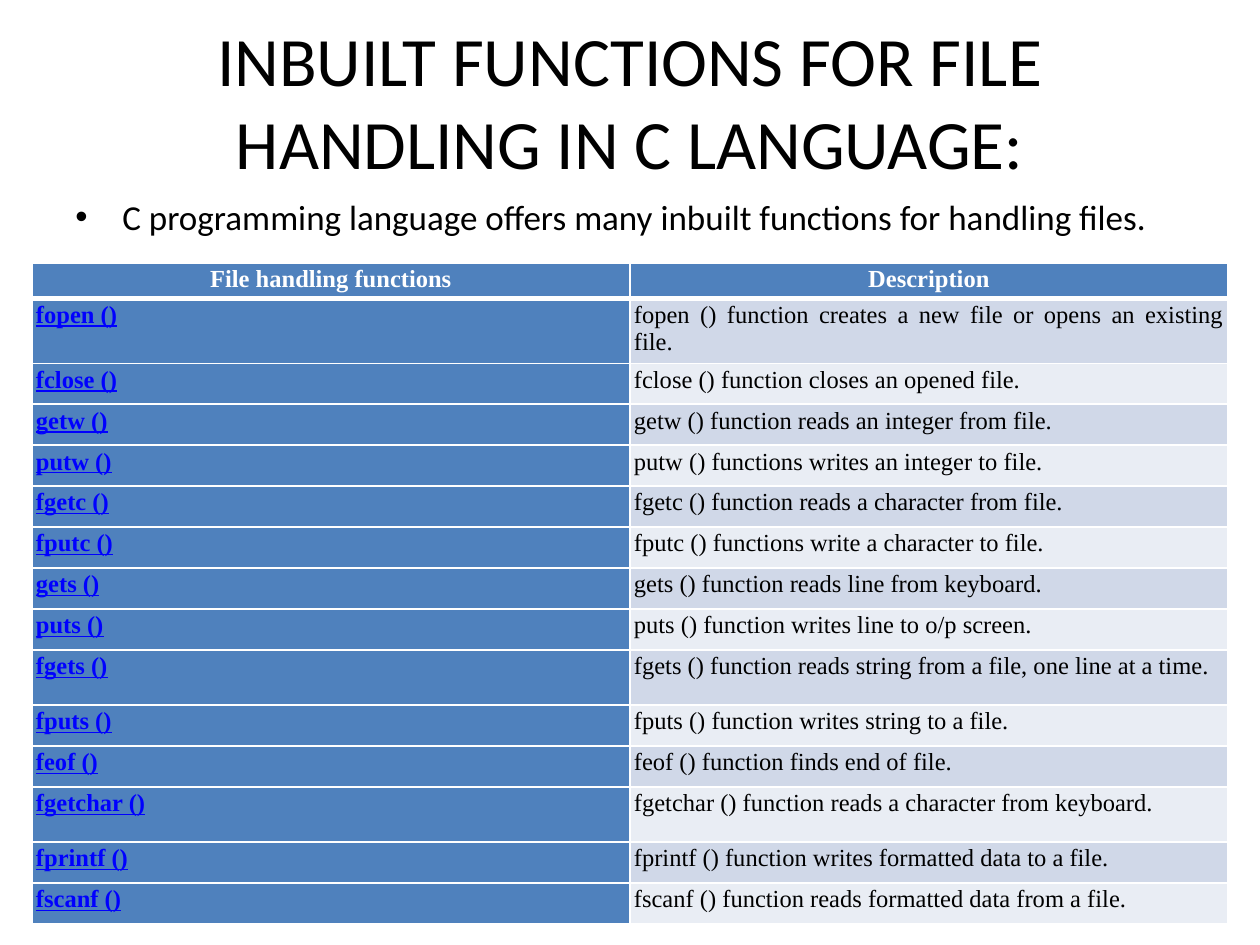
from lxml import etree
from pptx import Presentation
from pptx import util as u
from pptx.dml.color import RGBColor
from pptx.enum import text
from pptx.oxml import ns

EMU_PER_PX = 914400 / 126
BLACK = RGBColor(0x00, 0x00, 0x00)
WHITE = RGBColor(0xFF, 0xFF, 0xFF)
BLUE = RGBColor(0x4F, 0x81, 0xBD)
LINK_BLUE = RGBColor(0x00, 0x00, 0xFF)
BANDS = (RGBColor(0xD0, 0xD8, 0xE8), RGBColor(0xE9, 0xED, 0xF4))
SANS, SERIF = "Calibri", "Times New Roman"

TITLE = "INBUILT FUNCTIONS FOR FILE HANDLING IN C LANGUAGE:"
INTRO = "C programming language offers many inbuilt functions for handling files."
HEADERS = ("File handling functions", "Description")
FUNCTIONS = (
    ("fopen ()", "function creates a new file or opens an existing file."),
    ("fclose ()", "function closes an opened file."),
    ("getw ()", "function reads an integer from file."),
    ("putw ()", "functions writes an integer to file."),
    ("fgetc ()", "function reads a character from file."),
    ("fputc ()", "functions write a character to file."),
    ("gets ()", "function reads line from keyboard."),
    ("puts ()", "function writes line to o/p screen."),
    ("fgets ()", "function reads string from a file, one line at a time."),
    ("fputs ()", "function writes string to a file."),
    ("feof ()", "function finds end of file."),
    ("fgetchar ()", "function reads a character from keyboard."),
    ("fprintf ()", "function writes formatted data to a file."),
    ("fscanf ()", "function reads formatted data from a file."),
)
TALL_FUNCTIONS = ("fopen ()", "fgets ()", "fgetchar ()")
HEADER_HEIGHT, TALL_HEIGHT, ROW_HEIGHT = 35, 55, 41
TABLE_LEFT, TABLE_TOP, COLUMN_WIDTH = 32, 263, 598


def px(length):
    """Turn pixels into EMU."""
    return u.Emu(round(length * EMU_PER_PX))


def write(text_frame, words, size, font, color, align, bold=False, underline=False):
    """Put one formatted paragraph into a text frame and return it."""
    text_frame.text = words
    text_frame.word_wrap = True
    paragraph = text_frame.paragraphs[0]
    paragraph.alignment = align
    style = paragraph.runs[0].font
    style.size, style.name, style.color.rgb = u.Pt(size), font, color
    style.bold, style.underline = bold, underline
    return paragraph


def add_text(slide, box, words, size, align, anchor):
    """Add a text box and return its paragraph."""
    text_frame = slide.shapes.add_textbox(*map(px, box)).text_frame
    text_frame.vertical_anchor = anchor
    return write(text_frame, words, size, SANS, BLACK, align)


def add_bullet(paragraph, indent):
    """Give a paragraph a hanging bullet."""
    properties = paragraph._p.get_or_add_pPr()
    properties.set("marL", str(px(indent)))
    properties.set("indent", str(-px(indent)))
    etree.SubElement(properties, ns.qn("a:buFont"), typeface="Arial")
    etree.SubElement(properties, ns.qn("a:buChar"), char="•")


def set_borders(cell, top, bottom):
    """Draw white borders round a cell, with top and bottom widths in points."""
    properties = cell._tc.get_or_add_tcPr()
    widths = {"a:lnL": 1, "a:lnR": 1, "a:lnT": top, "a:lnB": bottom}
    for index, (tag, width) in enumerate(widths.items()):
        line = etree.Element(ns.qn(tag), w=str(u.Pt(width)))
        fill = etree.SubElement(line, ns.qn("a:solidFill"))
        etree.SubElement(fill, ns.qn("a:srgbClr"), val=str(WHITE))
        properties.insert(index, line)


def fill_cell(cell, words, fill, color, align, top=1, bottom=1, **emphasis):
    """Write and colour one table cell."""
    cell.margin_left = cell.margin_right = px(4)
    cell.margin_top = cell.margin_bottom = px(3)
    write(cell.text_frame, words, 14, SERIF, color, align, **emphasis)
    cell.fill.solid()
    cell.fill.fore_color.rgb = fill
    set_borders(cell, top, bottom)


def add_function_table(slide):
    """Add the table of functions and their descriptions."""
    heights = [HEADER_HEIGHT] + [
        TALL_HEIGHT if name in TALL_FUNCTIONS else ROW_HEIGHT for name, _ in FUNCTIONS
    ]
    box = (TABLE_LEFT, TABLE_TOP, 2 * COLUMN_WIDTH, sum(heights))
    table = slide.shapes.add_table(len(heights), 2, *map(px, box)).table
    for column in table.columns:
        column.width = px(COLUMN_WIDTH)
    for row, height in zip(table.rows, heights):
        row.height = px(height)
    align = text.PP_ALIGN
    for column, header in enumerate(HEADERS):
        fill_cell(table.cell(0, column), header, BLUE, WHITE, align.CENTER, bottom=3, bold=True)
    for row, (name, description) in enumerate(FUNCTIONS, 1):
        top = 3 if row == 1 else 1
        fill_cell(table.cell(row, 0), name, BLUE, LINK_BLUE, align.LEFT, top,
                  bold=True, underline=True)
        fill_cell(table.cell(row, 1), f"{name} {description}", BANDS[(row - 1) % 2],
                  BLACK, align.JUSTIFY, top)


def main():
    """Build and save the slide."""
    presentation = Presentation()
    presentation.slide_width, presentation.slide_height = px(1260), px(945)
    slide = presentation.slides.add_slide(presentation.slide_layouts[6])
    add_text(slide, (63, 21, 1134, 158), TITLE, 39.6,
             text.PP_ALIGN.CENTER, text.MSO_ANCHOR.MIDDLE)
    intro = add_text(slide, (63, 189, 1134, 624), INTRO, 20,
                     text.PP_ALIGN.LEFT, text.MSO_ANCHOR.TOP)
    intro.space_before = u.Pt(4)
    add_bullet(intro, 47)
    add_function_table(slide)
    presentation.save("out.pptx")


if __name__ == "__main__":
    main()
